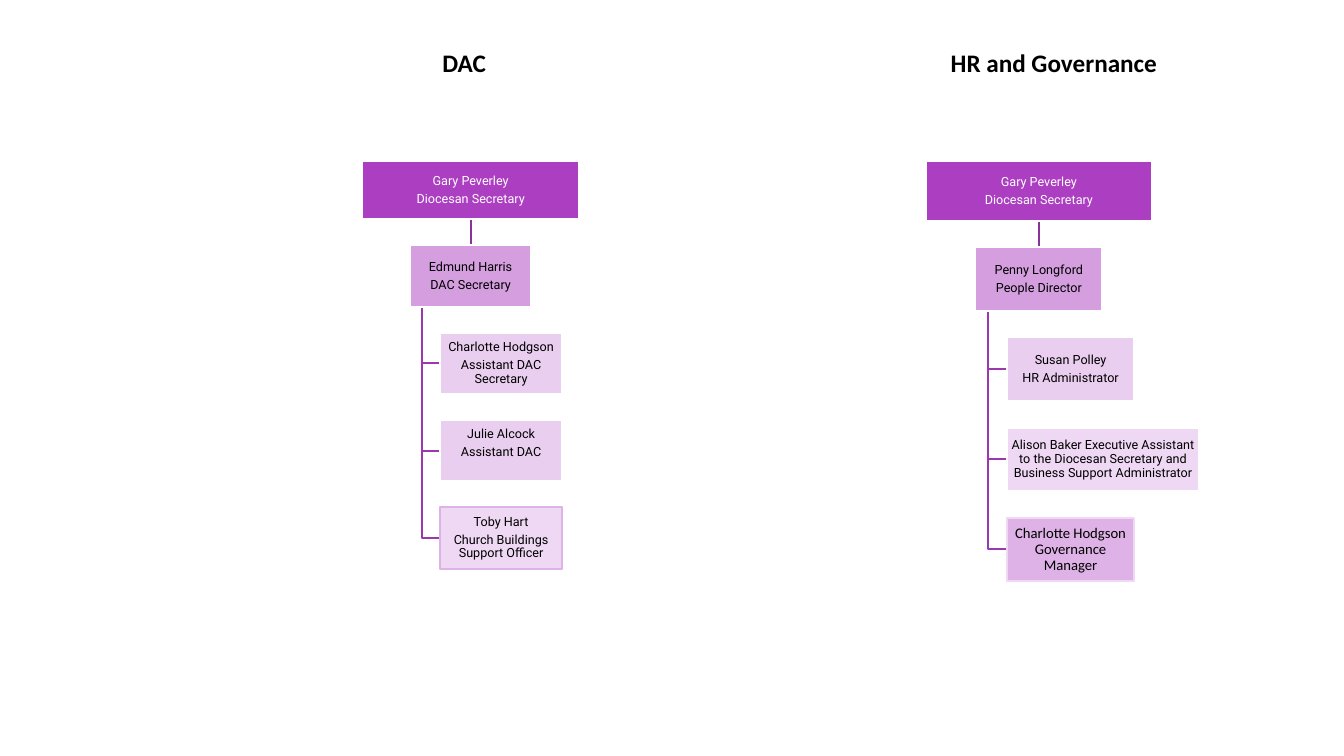
from dataclasses import dataclass

from lxml.etree import SubElement
from pptx import Presentation
from pptx.dml.color import RGBColor
from pptx.enum.shapes import MSO_CONNECTOR, MSO_SHAPE
from pptx.enum.text import MSO_ANCHOR, PP_ALIGN
from pptx.oxml.ns import qn
from pptx.util import Cm, Pt


@dataclass(frozen=True)
class Theme:
    """Colours, fonts and type sizes of the chart."""
    main: str = "AC3EC1"
    mid: str = "DEB2E6"
    pale: str = "EED8F3"
    stem: str = "8A329B"
    branch: str = "9C38AF"
    white: str = "FFFFFF"
    black: str = "000000"
    body: str = "Roboto"
    plain: str = "Calibri"
    small: float = 9
    large: float = 10.5
    head: float = 18
    line: float = 1.5


class Chart:
    """Draws the staff trees on one slide."""

    def __init__(self, slide, theme):
        """Keep the slide and the style."""
        self.slide, self.theme = slide, theme
        self.shapes = slide.shapes

    def label(self, par, text, size, font, color, bold=False):
        """Add one centred run to a paragraph."""
        par.alignment = PP_ALIGN.CENTER
        run = par.add_run()
        run.text = text
        run.font.size, run.font.name, run.font.bold = Pt(size), font, bold
        run.font.color.rgb = RGBColor.from_string(color)

    def title(self, shape, text, mid):
        """Place and fill a heading centred on mid."""
        shape.left, shape.top = Cm(mid - 6), Cm(1.07)
        shape.width, shape.height = Cm(12), Cm(1.03)
        frame = shape.text_frame
        frame.word_wrap, frame.vertical_anchor = True, MSO_ANCHOR.TOP
        t = self.theme
        self.label(frame.paragraphs[0], text, t.head, t.plain, t.black, True)

    def box(self, area, lines, fill, edge=None, alpha=None, color=None,
            font=None, size=None, lift=0):
        """Draw a staff box with its lines of text."""
        t = self.theme
        shape = self.shapes.add_shape(MSO_SHAPE.RECTANGLE, *map(Cm, area))
        shape.shadow.inherit = False
        shape.fill.solid()
        shape.fill.fore_color.rgb = RGBColor.from_string(fill)
        if alpha:
            tint = shape._element.spPr.find(".//" + qn("a:srgbClr"))
            SubElement(tint, qn("a:alpha")).set("val", str(alpha * 1000))
        self.ink(shape.line, edge or t.white)
        frame = shape.text_frame
        frame.word_wrap, frame.vertical_anchor = True, MSO_ANCHOR.MIDDLE
        frame.margin_left = frame.margin_right = frame.margin_top = Cm(0.03)
        frame.margin_bottom = Cm(0.03 + lift)
        for i, text in enumerate(lines):
            par = frame.add_paragraph() if i else frame.paragraphs[0]
            par.line_spacing, par.space_after = 0.9, Pt(3.15)
            self.label(par, text, size or t.small, font or t.body,
                       color or t.black)
        return shape

    def ink(self, line, color):
        """Set the colour and width of a line."""
        line.color.rgb = RGBColor.from_string(color)
        line.width = Pt(self.theme.line)

    def back(self, shape):
        """Send a shape behind the others."""
        self.shapes._spTree.insert(2, shape._element)

    def stem(self, top, low):
        """Join two boxes with a straight line."""
        line = self.shapes.add_connector(MSO_CONNECTOR.STRAIGHT, 0, 0, 0, 0)
        line.begin_connect(top, 2)
        line.end_connect(low, 0)
        self.ink(line.line, self.theme.stem)
        SubElement(line._element.spPr, qn("a:effectLst"))
        self.back(line)

    def branch(self, x, y, right, low):
        """Draw an elbow down and then right."""
        elbow = self.shapes.build_freeform(Cm(x), Cm(y))
        elbow.add_line_segments([(Cm(x), Cm(low)), (Cm(right), Cm(low))], False)
        shape = elbow.convert_to_shape()
        shape.shadow.inherit = False
        shape.fill.background()
        self.ink(shape.line, self.theme.branch)
        self.back(shape)

    def tree(self, mid, boss, size, lead, staff):
        """Draw a boss, a lead and the staff below."""
        t = self.theme
        wide, high = boss
        w, h = size
        top = self.box((mid - wide / 2, 4.06, wide, high),
                       ["Gary Peverley", "Diocesan Secretary"], t.main,
                       color=t.white)
        x, y = mid - w / 2, 4.06 + high + 0.65
        head = self.box((x, y, w, h), lead, t.main, alpha=50)
        self.stem(top, head)
        left = x + w / 4
        for i, (lines, span, look) in enumerate(staff, 1):
            row = y + 1.42 * h * i
            self.box((left, row, span, h), lines, **look)
            self.branch(x + w / 10, y + h, left, row + h / 2)


def main():
    """Build and save the slide."""
    deck = Presentation()
    deck.slide_width, deck.slide_height = Cm(33.87), Cm(19.05)
    slide = deck.slides.add_slide(deck.slide_layouts[5])
    t = Theme()
    chart = Chart(slide, t)
    chart.title(slide.shapes.title, "DAC", 11.7)
    chart.title(slide.shapes.add_textbox(0, 0, 0, 0), "HR and Governance", 26.56)
    light = {"fill": t.main, "alpha": 25}
    chart.tree(11.86, (5.48, 1.47), (3.07, 1.55),
               ["Edmund Harris", "DAC Secretary"], [
        (["Charlotte Hodgson", "Assistant DAC Secretary"], 3.07, light),
        (["Julie Alcock", "Assistant DAC"], 3.07, {**light, "lift": 0.36}),
        (["Toby Hart", "Church Buildings Support Officer"], 3.07,
         {"fill": t.pale, "edge": t.mid}),
    ])
    chart.tree(26.18, (5.69, 1.52), (3.2, 1.6),
               ["Penny Longford", "People Director"], [
        (["Susan Polley", "HR Administrator"], 3.2, light),
        (["Alison Baker Executive Assistant to the Diocesan Secretary "
          "and Business Support Administrator"], 4.83, {"fill": t.pale}),
        (["Charlotte Hodgson Governance Manager"], 3.2,
         {"fill": t.mid, "edge": t.pale, "font": t.plain, "size": t.large}),
    ])
    deck.save("out.pptx")


if __name__ == "__main__":
    main()
